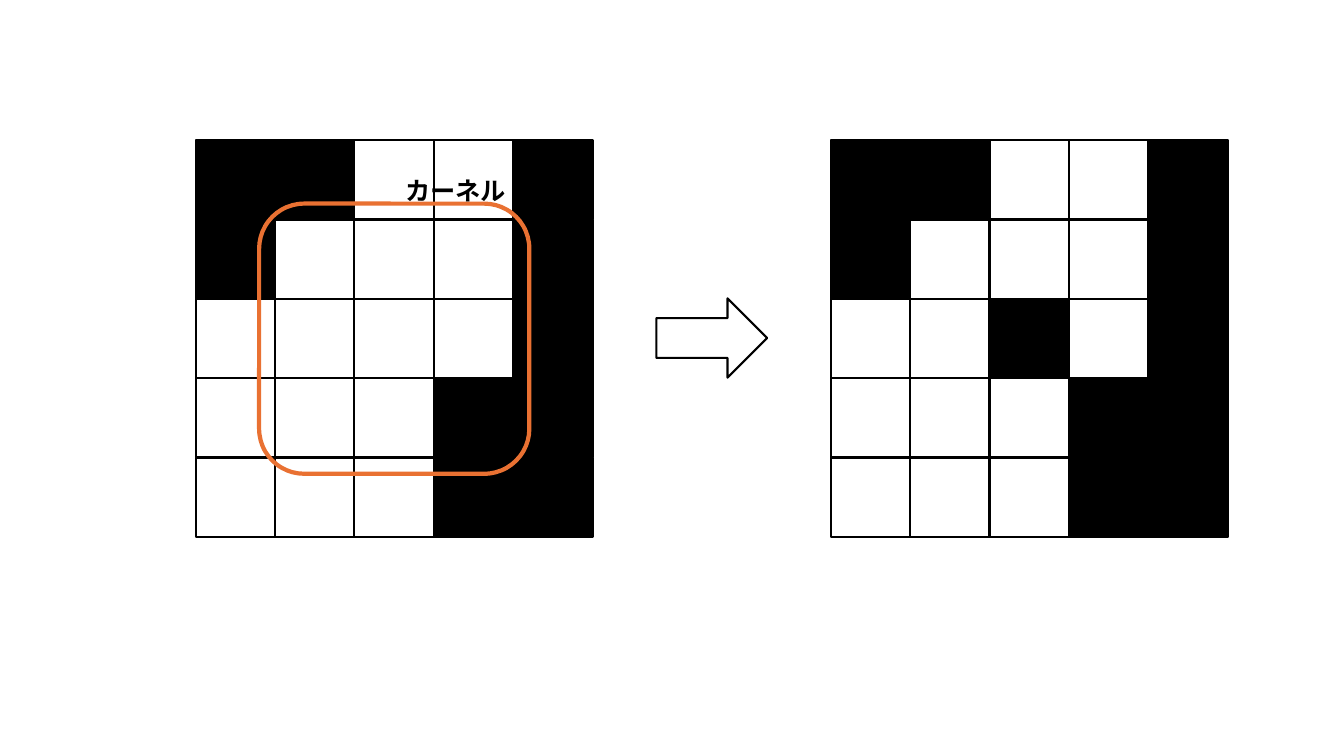
"""Build a slide showing a kernel eroding one pixel of a binary grid."""
from pptx import Presentation
from pptx.dml.color import RGBColor
from pptx.enum.shapes import MSO_SHAPE as Shape
from pptx.enum.text import MSO_AUTO_SIZE as AutoSize
from pptx.util import Inches, Pt

BLACK, WHITE, ORANGE = "000000", "FFFFFF", "E97132"
KERNEL_LABEL = "カーネル"
BEFORE = ["##..#", "#...#", "....#", "...##", "...##"]
AFTER = ["##..#", "#...#", "..#.#", "...##", "...##"]
GRIDS = [(1.94, BEFORE), (8.24, AFTER)]
GRID_TOP = 1.39
CELL = 3.15 / 4


def color(value):
    return RGBColor.from_string(value)


def add_outlined(slide, kind, left, top, width, height, fill, line=BLACK, weight=1.5):
    shape = slide.shapes.add_shape(
        kind, Inches(left), Inches(top), Inches(width), Inches(height))
    shape.shadow.inherit = False
    if fill:
        shape.fill.solid()
        shape.fill.fore_color.rgb = color(fill)
    else:
        shape.fill.background()
    shape.line.color.rgb = color(line)
    shape.line.width = Pt(weight)


def add_grid(slide, left, rows):
    for row, pixels in enumerate(rows):
        for column, pixel in enumerate(pixels):
            add_outlined(slide, Shape.RECTANGLE, left + column * CELL,
                         GRID_TOP + row * CELL, CELL, CELL,
                         BLACK if pixel == "#" else WHITE)


def add_kernel_label(slide):
    box = slide.shapes.add_textbox(Inches(3.92), Inches(1.69), Inches(1.21), Inches(0.4))
    frame = box.text_frame
    frame.word_wrap = False
    frame.auto_size = AutoSize.SHAPE_TO_FIT_TEXT
    paragraph = frame.paragraphs[0]
    paragraph.text = KERNEL_LABEL
    font = paragraph.font
    font.name, font.size, font.bold = "Roboto", Pt(18), True
    font.color.rgb = color(BLACK)


def main():
    presentation = Presentation()
    presentation.slide_width, presentation.slide_height = Inches(13.33), Inches(7.5)
    slide = presentation.slides.add_slide(presentation.slide_layouts[6])
    for left, rows in GRIDS:
        add_grid(slide, left, rows)
    add_outlined(slide, Shape.ROUNDED_RECTANGLE, 2.57, 2.02, 2.68, 2.68, None, ORANGE, 3)
    add_kernel_label(slide)
    add_outlined(slide, Shape.RIGHT_ARROW, 6.51, 2.96, 1.1, CELL, WHITE)
    presentation.save("out.pptx")


if __name__ == "__main__":
    main()
